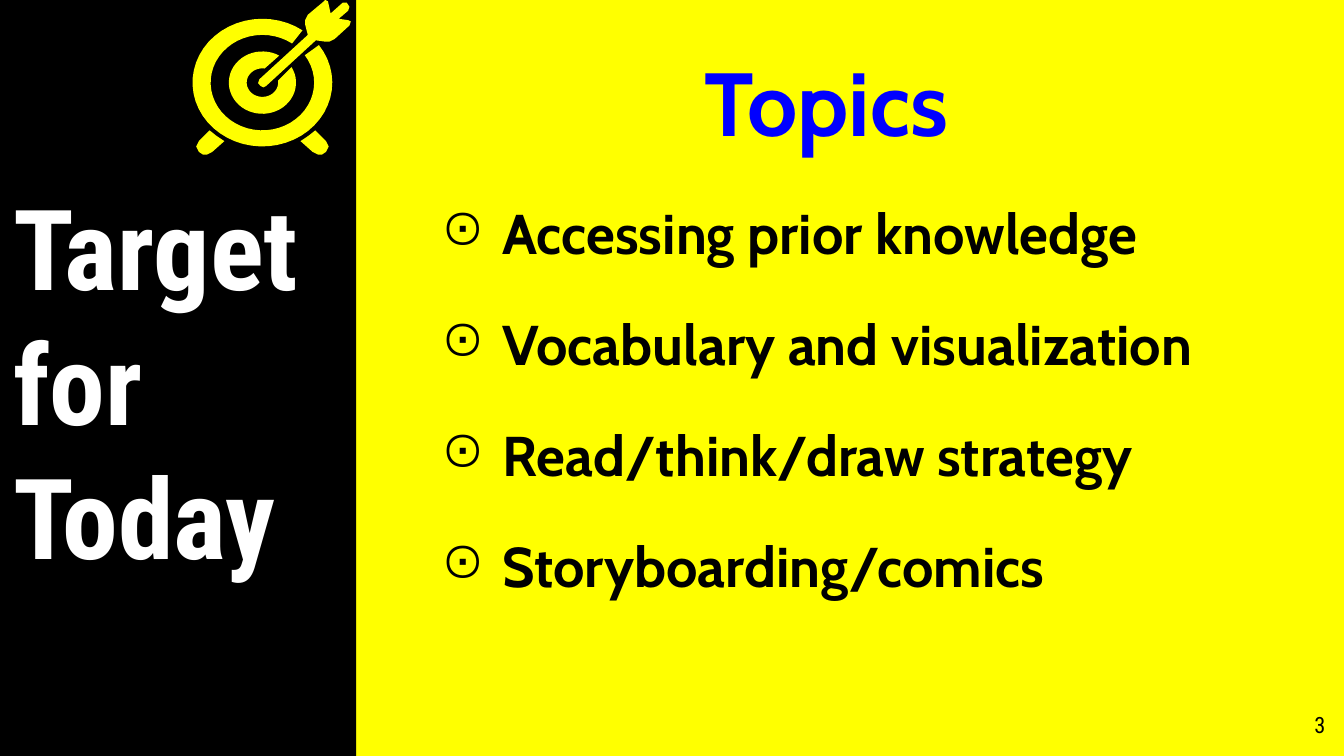
from math import cos, radians, sin

from lxml import etree
from pptx import Presentation
from pptx import util as u
from pptx.dml.color import RGBColor
from pptx.enum import shapes, text
from pptx.oxml.ns import qn

COLORS = {"black": "000000", "yellow": "FFFF00", "white": "FFFFFF", "blue": "0000FF"}
COL = u.Inches(0.1)
CENTER = (19.53, 6.15)
TOPICS = ["Accessing prior knowledge", "Vocabulary and visualization",
          "Read/think/draw strategy", "Storyboarding/comics"]
FOOT = [(15.6, 9.7), (14.8, 10.5), (14.6, 10.9), (14.8, 11.3), (15.1, 11.5),
        (15.4, 11.5), (15.8, 11.3), (16.7, 10.5), (16.1, 10.1)]
ARROW = [(24.2, 0), (24.1, 0.1), (22.9, 1.1), (22.7, 1.5), (22.7, 1.8), (22.9, 2.6),
         (19.3, 5.9), (19.2, 6.2), (19.4, 6.4), (19.6, 6.5), (19.8, 6.4), (23.5, 3),
         (24.2, 3.1), (24.5, 3.1), (24.9, 2.9), (26, 1.9), (26.1, 1.6), (25.9, 1.5),
         (25.2, 1.4), (25.9, 0.8), (26, 0.5), (25.8, 0.2), (25.5, 0.2), (24.6, 1),
         (24.4, 0.1)]


def grid(*cells):
    """Turn counts of grid columns into lengths."""
    return [u.Emu(round(c * COL)) for c in cells]


def rgb(name):
    """Look up a colour by name."""
    return RGBColor.from_string(COLORS[name])


def paint(sp, color):
    """Give a shape a flat fill without line or shadow."""
    sp.shadow.inherit = False
    sp.fill.solid()
    sp.fill.fore_color.rgb = rgb(color)
    sp.line.fill.background()


def add_outline(s, points, color):
    """Draw a closed filled outline through grid points."""
    first, *rest = [grid(*point) for point in points]
    builder = s.shapes.build_freeform(*first, scale=1.0)
    builder.add_line_segments(rest, close=True)
    paint(builder.convert_to_shape(), color)


def arc(rx, ry, start, end, steps=48):
    """List points on an ellipse around the target's centre."""
    angles = [radians(start + (end - start) * i / steps) for i in range(steps + 1)]
    return [(CENTER[0] + rx * cos(a), CENTER[1] - ry * sin(a)) for a in angles]


def add_ring(s, outer, inner, color):
    """Draw an open ring from its outer and inner arcs."""
    add_outline(s, arc(*outer) + arc(*inner)[::-1], color)


def add_target(s, color):
    """Draw the target with its rings, feet and arrow."""
    add_ring(s, (5.2, 4.75, 55, 396), (3.85, 3.55, 55, 395), color)
    add_ring(s, (2.5, 2.32, 60, 390), (1.17, 1.06, 82, 368), color)
    for foot in (FOOT, [(2 * CENTER[0] - x, y) for x, y in FOOT]):
        add_outline(s, foot, color)
    add_outline(s, ARROW, color)


def add_text(s, cells, lines, font, size, color, bold=True):
    """Add a wrapped text box and return its paragraphs."""
    tf = s.shapes.add_textbox(*grid(*cells)).text_frame
    tf.word_wrap = True
    tf.vertical_anchor = text.MSO_ANCHOR.TOP
    tf.margin_left = tf.margin_right = tf.margin_top = tf.margin_bottom = COL
    tf.text = "\n".join(lines)
    for p in tf.paragraphs:
        for r in p.runs:
            r.font.name, r.font.size, r.font.bold = font, u.Pt(size), bold
            r.font.color.rgb = rgb(color)
    return tf.paragraphs


def add_bullet(p, char, color):
    """Give a paragraph a coloured bullet with a hanging indent."""
    pPr = p._p.get_or_add_pPr()
    pPr.set("marL", str(u.Inches(0.5)))
    pPr.set("indent", str(u.Inches(-0.46)))
    bu_clr = etree.SubElement(pPr, qn("a:buClr"))
    etree.SubElement(bu_clr, qn("a:srgbClr")).set("val", COLORS[color])
    etree.SubElement(pPr, qn("a:buChar")).set("char", char)


def add_topics(s):
    """Add the heading and its bulleted topics in one box."""
    heading, *items = add_text(s, (31.4, 2.5, 66.9, 47.6), ["Topics"] + TOPICS,
                               "Cabin", 30, "black")
    heading._p.get_or_add_pPr().set("marL", str(u.Inches(2)))
    heading.runs[0].font.size = u.Pt(48)
    heading.runs[0].font.color.rgb = rgb("blue")
    for p in items:
        p.space_before = u.Pt(23.5)
        add_bullet(p, "⊙", "black")


def main():
    """Build the slide and save it."""
    prs = Presentation()
    prs.slide_width, prs.slide_height = grid(100, 56.25)
    s = prs.slides.add_slide(prs.slide_layouts[6])
    s.background.fill.solid()
    s.background.fill.fore_color.rgb = rgb("yellow")
    panel = s.shapes.add_shape(shapes.MSO_SHAPE.RECTANGLE, *grid(0, 0, 26.5, 56.25))
    paint(panel, "black")
    for p in add_text(s, (0, 12.3, 27.2, 16.2), ["Target", "for", "Today"],
                      "Roboto Condensed", 60, "white"):
        p.line_spacing = u.Pt(72)
    add_topics(s)
    add_target(s, "yellow")
    number, = add_text(s, (93.6, 51.9, 6, 4.3), ["3"], "Roboto Condensed", 12, "black", False)
    number.alignment = text.PP_ALIGN.RIGHT
    prs.save("out.pptx")


if __name__ == "__main__":
    main()
